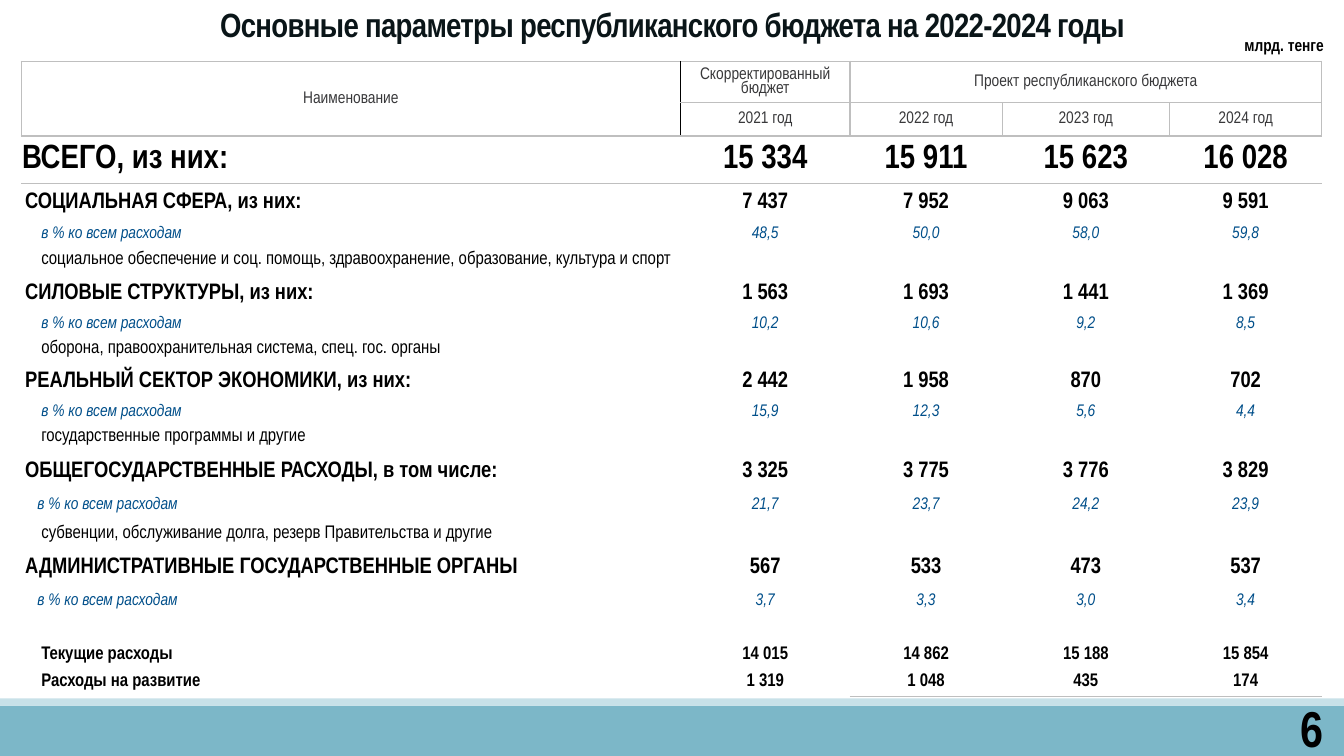
import pptx
import pptx.dml.color
import pptx.enum.shapes
import pptx.enum.text
import pptx.oxml
import pptx.util
from lxml import etree
from pptx.util import Inches

HUES = {
    "band": "7CB7C8", "edge": "C8E1E8", "title": "0A1518", "head": "38383A",
    "black": "000000", "blue": "004F8A", "grid": "BFBFBF",
}
FONT = "Arial Narrow"
PLAIN = "{2D5ABB26-0587-4C30-8999-92F81FD0307C}"
SPACE = "http://schemas.openxmlformats.org/drawingml/2006/main"
ALIGN = pptx.enum.text.PP_ALIGN
MID = pptx.enum.text.MSO_ANCHOR.MIDDLE
WIDTHS = [6.54, 1.68, 1.51, 1.66, 1.51]
SHARE = "в % ко всем расходам"

# kind: size, hue, bold, italic, indent, alignment of the name
KINDS = {
    "head": (12, "head", False, False, 0.01, ALIGN.CENTER),
    "total": (24, "black", True, False, 0.01, ALIGN.LEFT),
    "group": (16, "black", True, False, 0.04, ALIGN.LEFT),
    "share": (12, "blue", False, True, 0.2, ALIGN.LEFT),
    "low": (12, "blue", False, True, 0.16, ALIGN.LEFT),
    "note": (13, "black", False, False, 0.2, ALIGN.JUSTIFY),
    "sum": (13, "black", True, False, 0.2, ALIGN.JUSTIFY),
}
ROWS = [
    ("head", 0.41, "Наименование|Скорректированный бюджет|Проект республиканского бюджета"),
    ("head", 0.33, "|2021 год|2022 год|2023 год|2024 год"),
    ("total", 0.47, "ВСЕГО, из них:|15 334|15 911|15 623|16 028"),
    ("group", 0.38, "СОЦИАЛЬНАЯ СФЕРА, из них:|7 437|7 952|9 063|9 591"),
    ("share", 0.23, SHARE + "|48,5|50,0|58,0|59,8"),
    ("note", 0.29, "социальное обеспечение и соц. помощь, здравоохранение, образование, культура и спорт"),
    ("group", 0.38, "СИЛОВЫЕ СТРУКТУРЫ, из них:|1 563|1 693|1 441|1 369"),
    ("share", 0.23, SHARE + "|10,2|10,6|9,2|8,5"),
    ("note", 0.26, "оборона, правоохранительная система, спец. гос. органы"),
    ("group", 0.38, "РЕАЛЬНЫЙ СЕКТОР ЭКОНОМИКИ, из них:|2 442|1 958|870|702"),
    ("share", 0.23, SHARE + "|15,9|12,3|5,6|4,4"),
    ("note", 0.26, "государственные программы и другие"),
    ("group", 0.43, "ОБЩЕГОСУДАРСТВЕННЫЕ РАСХОДЫ, в том числе:|3 325|3 775|3 776|3 829"),
    ("low", 0.23, SHARE + "|21,7|23,7|24,2|23,9"),
    ("note", 0.34, "субвенции, обслуживание долга, резерв Правительства и другие"),
    ("group", 0.34, "АДМИНИСТРАТИВНЫЕ ГОСУДАРСТВЕННЫЕ ОРГАНЫ|567|533|473|537"),
    ("low", 0.32, SHARE + "|3,7|3,3|3,0|3,4"),
    ("note", 0.24, ""),
    ("sum", 0.26, "Текущие расходы|14 015|14 862|15 188|15 854"),
    ("sum", 0.29, "Расходы на развитие|1 319|1 048|435|174"),
]


def color(name):
    """Return the named colour."""
    return pptx.dml.color.RGBColor.from_string(HUES[name])


def add_run(para, text, size, hue, bold=True, slant=False):
    """Add one styled run to a paragraph."""
    run = para.add_run()
    run.text = text
    font = run.font
    font.name, font.size = FONT, pptx.util.Pt(size)
    font.bold, font.italic = bold, slant
    font.color.rgb = color(hue)
    return run


def add_band(slide, top, height, hue):
    """Draw a full-width band."""
    band = slide.shapes.add_shape(
        pptx.enum.shapes.MSO_SHAPE.RECTANGLE,
        0, Inches(top), Inches(13.33), Inches(height))
    band.shadow.inherit = False
    band.fill.solid()
    band.fill.fore_color.rgb = color(hue)
    band.line.fill.background()


def add_label(slide, box, text, size, hue, align, pitch=1.0):
    """Add a bold one-line text box and return its run."""
    frame = slide.shapes.add_textbox(*map(Inches, box)).text_frame
    frame.word_wrap = True
    frame.vertical_anchor = MID
    para = frame.paragraphs[0]
    para.alignment, para.line_spacing = align, pitch
    return add_run(para, text, size, hue)


def set_sides(cell, sides):
    """Draw the cell's borders from a dict of side to hue and width."""
    props = cell._tc.get_or_add_tcPr()
    for side in "LRTB":
        if side in sides:
            hue, width = sides[side]
            props.append(pptx.oxml.parse_xml(
                f'<a:ln{side} xmlns:a="{SPACE}" w="{int(width * 12700)}"><a:solidFill>'
                f'<a:srgbClr val="{HUES[hue]}"/></a:solidFill></a:ln{side}>'))


def find_sides(row, col):
    """Return the borders that a cell has."""
    grid = ("grid", 1)
    if row < 2:
        sides = dict.fromkeys("LRTB", grid)
        if col < 2:
            sides["RL"[col]] = ("black", 0.25)
        return sides
    if row == 2:
        return {"T": grid}
    return {"B": grid} if row == len(ROWS) - 1 and col > 1 else {}


def fill_cell(cell, text, kind, col):
    """Write and align one cell's text."""
    size, hue, bold, slant, indent, align = KINDS[kind]
    cell.margin_left = Inches(0.01 if col else indent)
    cell.margin_top = cell.margin_right = Inches(0.01)
    cell.margin_bottom = 0
    cell.vertical_anchor = MID
    cell.fill.background()
    para = cell.text_frame.paragraphs[0]
    para.alignment = ALIGN.CENTER if col else align
    if kind == "head":
        para.line_spacing = 0.85
    if text:
        add_run(para, text, size, hue, bold, slant)
    else:
        etree.SubElement(para._p, f"{{{SPACE}}}endParaRPr", sz="1000")


def add_budget(slide):
    """Build the budget table."""
    high = sum(row[1] for row in ROWS)
    table = slide.shapes.add_table(
        len(ROWS), len(WIDTHS), Inches(0.21), Inches(0.61),
        Inches(sum(WIDTHS)), Inches(high)).table
    table.first_row = table.horz_banding = False
    table._tbl.tblPr.find(f"{{{SPACE}}}tableStyleId").text = PLAIN
    for col, width in enumerate(WIDTHS):
        table.columns[col].width = Inches(width)
    for row, (kind, height, line) in enumerate(ROWS):
        table.rows[row].height = Inches(height)
        texts = line.split("|")
        texts += [""] * (len(WIDTHS) - len(texts))
        for col, text in enumerate(texts):
            cell = table.cell(row, col)
            set_sides(cell, find_sides(row, col))
            fill_cell(cell, text, kind, col)
    table.cell(0, 0).merge(table.cell(1, 0))
    table.cell(0, 2).merge(table.cell(0, 4))


def main():
    """Build and save the slide."""
    deck = pptx.Presentation()
    deck.slide_width, deck.slide_height = Inches(13.33), Inches(7.5)
    slide = deck.slides.add_slide(deck.slide_layouts[6])
    add_band(slide, 7, 0.5, "band")
    add_band(slide, 6.93, 0.07, "edge")
    add_label(slide, (11.79, 7.02, 1.43, 0.4), "6", 36, "black", ALIGN.RIGHT)
    title = add_label(
        slide, (0, -0.02, 13.33, 0.58),
        "Основные параметры республиканского бюджета на 2022-2024 годы",
        24, "title", ALIGN.CENTER, 0.85)
    title._r.get_or_add_rPr().set("spc", "-50")
    add_budget(slide)
    add_label(slide, (12.03, 0.19, 1.2, 0.48), "млрд. тенге", 12, "black", ALIGN.RIGHT, 1.1)
    deck.save("out.pptx")


if __name__ == "__main__":
    main()
